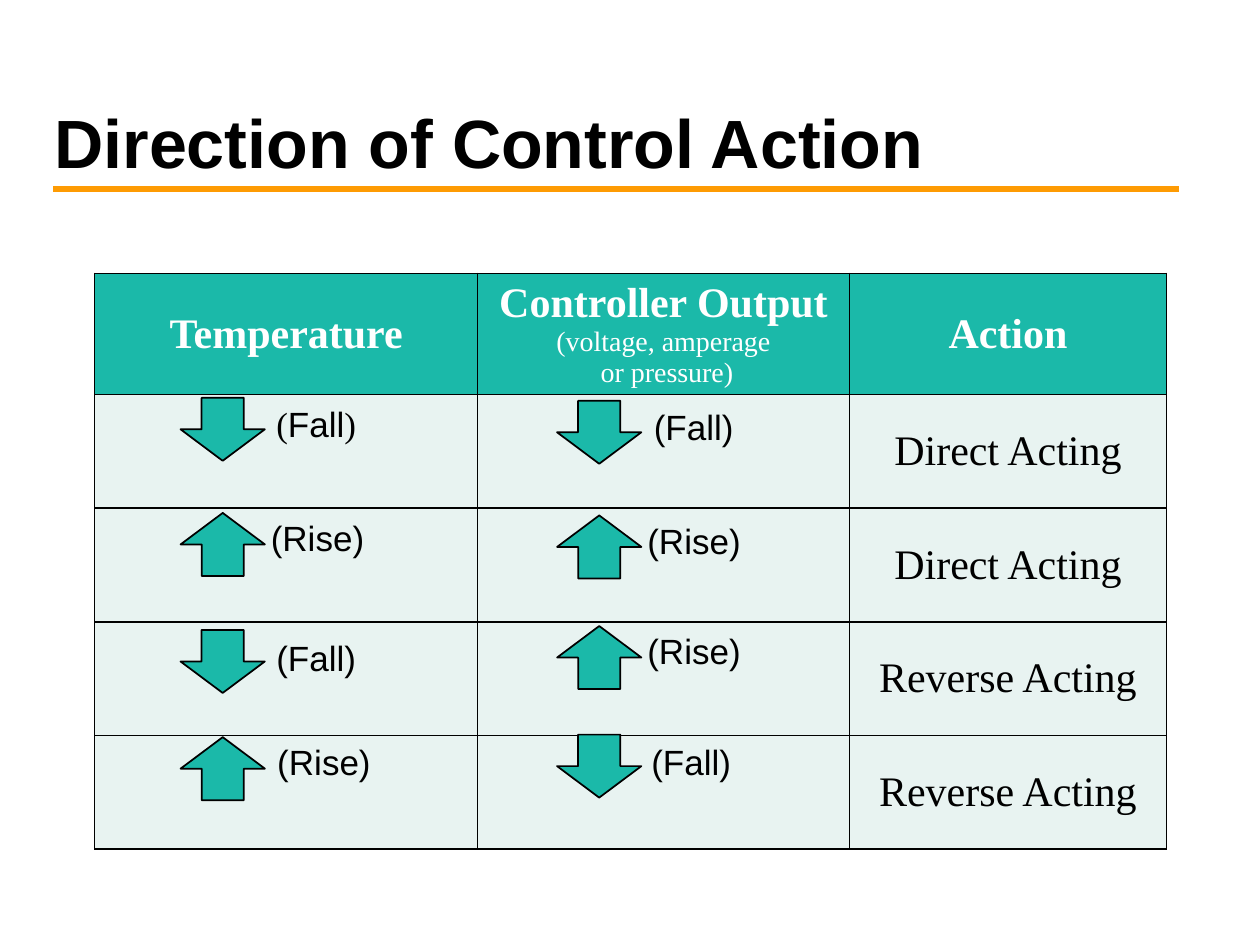
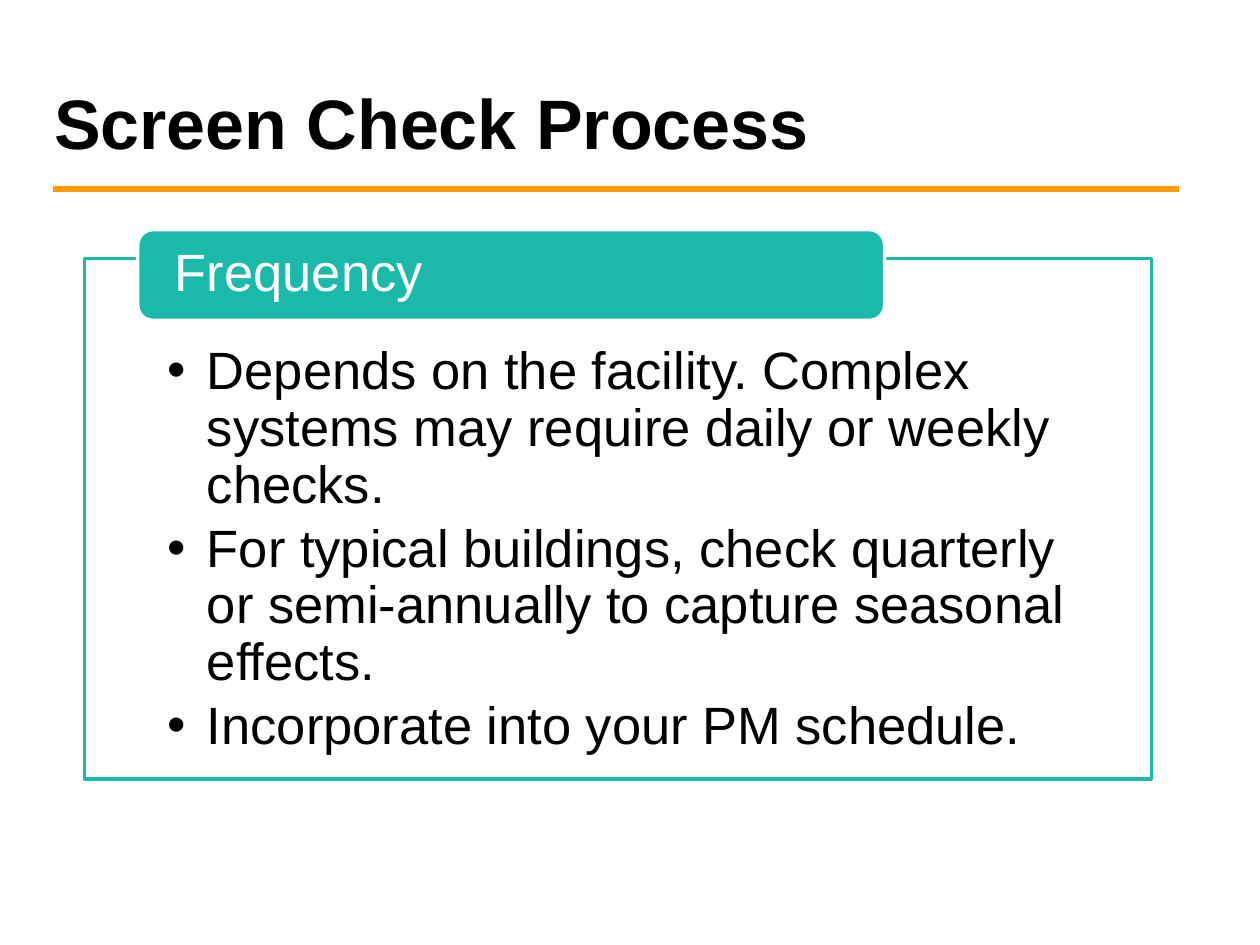
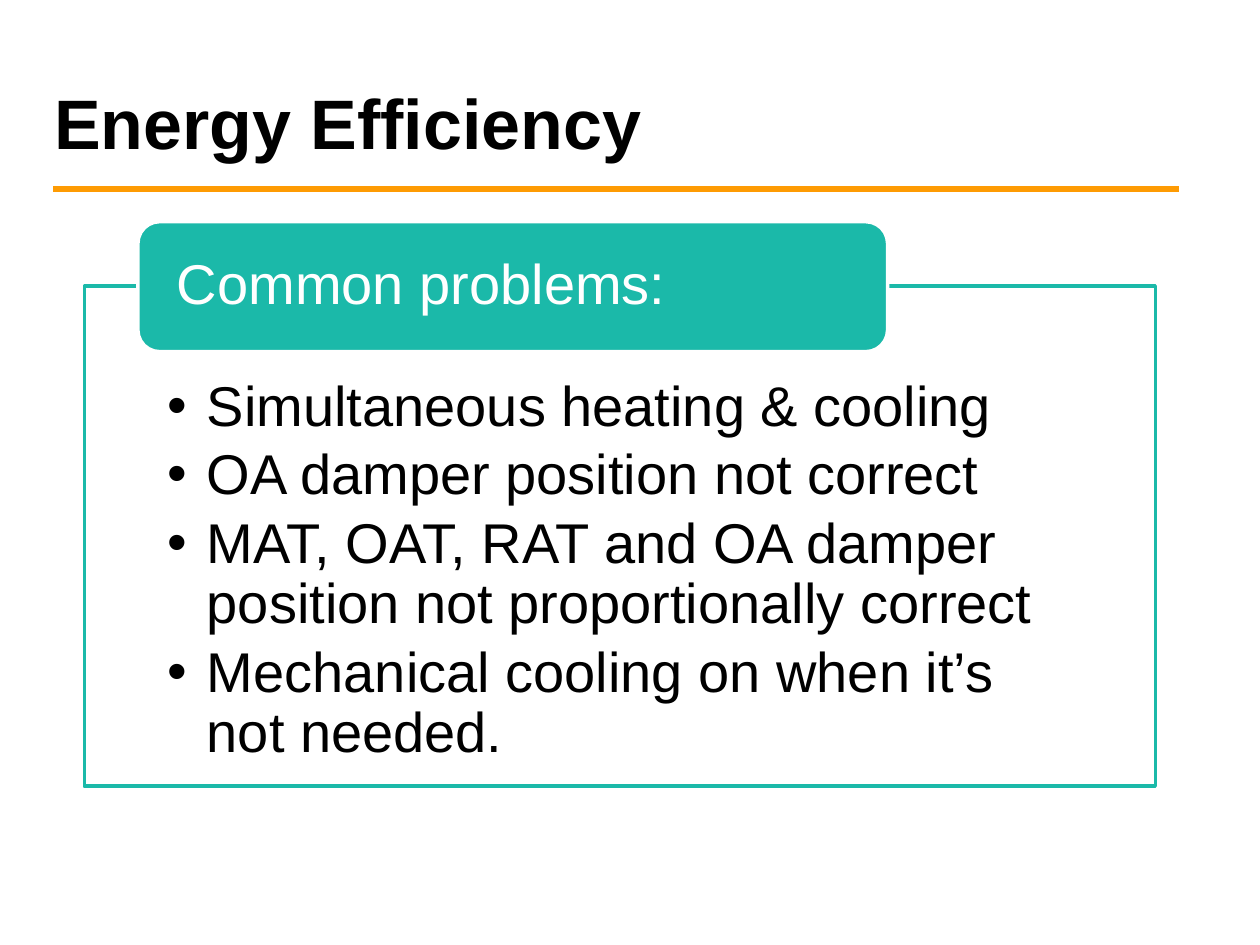
from dataclasses import dataclass

from lxml.etree import SubElement
from pptx import Presentation
from pptx.dml.color import RGBColor
from pptx.enum.shapes import MSO_CONNECTOR, MSO_SHAPE
from pptx.enum.text import MSO_ANCHOR, MSO_AUTO_SIZE, PP_ALIGN
from pptx.oxml.ns import qn
from pptx.util import Cm, Pt

COLORS = {
    "teal": "1BB9A9",
    "mint": "E8F3F1",
    "orange": "FE9B03",
    "black": "000000",
    "white": "FFFFFF",
}
SANS = "Arial"
SERIF = "Times New Roman"
TITLE_ONLY, TITLE_AND_BODY = 5, 1


@dataclass
class Box:
    left: float
    top: float
    width: float
    height: float

    def inside(self, dx, dy, width, height):
        return Box(self.left + dx, self.top + dy, width, height)

    def lengths(self):
        return [Cm(side) for side in (self.left, self.top, self.width, self.height)]


def rgb(name):
    return RGBColor.from_string(COLORS[name])


def paint(shape, fill, line, width):
    shape.fill.solid()
    shape.fill.fore_color.rgb = rgb(fill)
    shape.line.color.rgb = rgb(line)
    shape.line.width = Pt(width)


def style(paragraph, size, color, face=SANS, bold=False):
    for run in paragraph.runs:
        run.font.size = Pt(size)
        run.font.name = face
        run.font.bold = bold
        run.font.color.rgb = rgb(color)


def set_insets(frame, left, top, right, bottom):
    frame.margin_left, frame.margin_top = Cm(left), Cm(top)
    frame.margin_right, frame.margin_bottom = Cm(right), Cm(bottom)


def add_master_rule(prs, slide):
    rule = slide.shapes.add_connector(
        MSO_CONNECTOR.STRAIGHT, Cm(1.07), Cm(3.81), Cm(23.77), Cm(3.81))
    rule.line.color.rgb = rgb("orange")
    rule.line.width = Pt(4)
    SubElement(rule.element.spPr, qn("a:effectLst"))
    prs.slide_master.shapes.element.append(rule.element)


def place(shape, box):
    shape.left, shape.top, shape.width, shape.height = box.lengths()


def add_titled_slide(prs, layout, heading, box, size):
    slide = prs.slides.add_slide(prs.slide_layouts[layout])
    title = slide.shapes.title
    place(title, box)
    frame = title.text_frame
    frame.text = heading
    frame.auto_size = MSO_AUTO_SIZE.NONE
    frame.vertical_anchor = MSO_ANCHOR.MIDDLE
    frame.paragraphs[0].alignment = PP_ALIGN.LEFT
    style(frame.paragraphs[0], size, "black", bold=True)
    return slide


def set_borders(cell):
    properties = cell._tc.get_or_add_tcPr()
    for position, side in enumerate(("lnL", "lnR", "lnT", "lnB")):
        border = properties.makeelement(qn(f"a:{side}"), {"w": str(Pt(1))})
        fill = SubElement(border, qn("a:solidFill"))
        SubElement(fill, qn("a:srgbClr"), val=COLORS["black"])
        properties.insert(position, border)


def fill_cell(cell, text, header):
    cell.fill.solid()
    cell.fill.fore_color.rgb = rgb("teal" if header else "mint")
    set_borders(cell)
    cell.vertical_anchor = MSO_ANCHOR.MIDDLE
    cell.text = text
    for paragraph in cell.text_frame.paragraphs:
        paragraph.alignment = PP_ALIGN.CENTER
        style(paragraph, 24, "white" if header else "black", SERIF, header)


def add_output_note(cell):
    first = cell.text_frame.paragraphs[0]
    second = cell.text_frame.add_paragraph()
    second.alignment = PP_ALIGN.CENTER
    for paragraph, words in ((first, "(voltage, amperage"), (second, " or pressure)")):
        note = paragraph.add_run()
        note.text = words
        note.font.size = Pt(16)
        note.font.name = SERIF
        note.font.bold = False
        note.font.color.rgb = rgb("white")


def add_action_table(slide, box):
    headers = ["Temperature", "Controller Output ", "Action"]
    actions = ["Direct Acting"] * 2 + ["Reverse Acting"] * 2
    rows = [headers] + [["", "", action] for action in actions]
    table = slide.shapes.add_table(len(rows), len(headers), *box.lengths()).table
    table.horz_banding = False
    for column, width in zip(table.columns, (7.72, 7.49, 6.4)):
        column.width = Cm(width)
    for index, texts in enumerate(rows):
        table.rows[index].height = Cm(2.29 if index else 2.44)
        for cell, text in zip(table.rows[index].cells, texts):
            fill_cell(cell, text, header=index == 0)
    add_output_note(table.cell(0, 1))


def add_signal(slide, box, word, label_dx, label_dy, bracket_face):
    group = slide.shapes.add_group_shape()
    arrow = group.shapes.add_shape(MSO_SHAPE.DOWN_ARROW, *box.lengths())
    arrow.shadow.inherit = False
    paint(arrow, "teal", "black", 1)
    arrow.rotation = 180 if word == "Rise" else 0
    label_box = box.inside(label_dx, label_dy, 3.6 if word == "Rise" else 2.67, 1.12)
    label = group.shapes.add_textbox(*label_box.lengths())
    label.text_frame.word_wrap = True
    paragraph = label.text_frame.paragraphs[0]
    for piece in ("(", word, ")"):
        paragraph.add_run().text = piece
    style(paragraph, 20, "black")
    for bracket in paragraph.runs[::2]:
        bracket.font.name = bracket_face


def add_signals(slide, box):
    temperature = [
        (2.51, "Fall", 1.68, -0.03, SERIF),
        (4.83, "Rise", 1.57, -0.05, SANS),
        (7.19, "Fall", 1.68, 0, SANS),
        (9.35, "Rise", 1.7, -0.05, SANS),
    ]
    output = [
        (2.57, "Fall", 1.7, -0.03, SANS),
        (4.88, "Rise", 1.57, -0.05, SANS),
        (7.11, "Rise", 1.57, -0.05, SANS),
        (9.3, "Fall", 1.65, 0, SANS),
    ]
    for left, signals in ((1.73, temperature), (9.32, output)):
        for top, *label in signals:
            add_signal(slide, box.inside(left, top, 1.7, 1.27), *label)


def add_bullet(paragraph):
    properties = paragraph._p.get_or_add_pPr()
    properties.set("marL", str(Cm(0.79)))
    properties.set("indent", str(-Cm(0.79)))
    SubElement(properties, qn("a:buChar"), char="•")


def add_list_panel(slide, box, points, size, top_inset, bottom_inset):
    panel = slide.placeholders[1]
    place(panel, box)
    paint(panel, "white", "teal", 2)
    color = panel.fill._xPr.find(qn("a:solidFill")).find(qn("a:srgbClr"))
    SubElement(color, qn("a:alpha"), val="90000")
    frame = panel.text_frame
    frame.text = "\n".join(points)
    frame.auto_size = MSO_AUTO_SIZE.NONE
    frame.vertical_anchor = MSO_ANCHOR.TOP
    set_insets(frame, 1.68, top_inset, 1.68, bottom_inset)
    for paragraph in frame.paragraphs:
        paragraph.line_spacing = 0.9
        paragraph.space_before = Pt(0)
        paragraph.space_after = Pt(round(size * 0.14, 1))
        add_bullet(paragraph)
        style(paragraph, size, "black")


def add_panel_tab(slide, box, caption, size, rise, height):
    tab_box = box.inside(box.width * 0.05, -rise, box.width * 0.7, height)
    tab = slide.shapes.add_shape(MSO_SHAPE.ROUNDED_RECTANGLE, *tab_box.lengths())
    tab.shadow.inherit = False
    paint(tab, "teal", "white", 2)
    frame = tab.text_frame
    frame.text = caption
    frame.word_wrap = True
    frame.vertical_anchor = MSO_ANCHOR.MIDDLE
    set_insets(frame, 0.66, 0, 0.66, 0)
    frame.paragraphs[0].alignment = PP_ALIGN.LEFT
    frame.paragraphs[0].line_spacing = 0.9
    style(frame.paragraphs[0], size, "white")


def build_action_slide(prs):
    slide = add_titled_slide(prs, TITLE_ONLY, "Direction of Control Action",
                             Box(0.84, 1.47, 22.66, 2.74), 39)
    add_master_rule(prs, slide)
    table_box = Box(1.91, 5.51, 21.61, 11.6)
    add_action_table(slide, table_box)
    add_signals(slide, table_box)


def build_list_slide(prs, heading, box, caption, points, size, insets, rise, tab_height):
    slide = add_titled_slide(prs, TITLE_AND_BODY, heading,
                             Box(0.84, 1.07, 18.42, 2.74), 40)
    add_list_panel(slide, box, points, size, *insets)
    add_panel_tab(slide, box, caption, size, rise, tab_height)


def main():
    prs = Presentation()
    prs.slide_width, prs.slide_height = Cm(25.4), Cm(19.05)
    build_action_slide(prs)
    build_list_slide(
        prs, "Screen Check Process", Box(1.7, 5.21, 21.51, 10.49), "Frequency",
        ["Depends on the facility. Complex systems may require daily or weekly checks.",
         "For typical buildings, check quarterly or semi-annually to capture seasonal effects.",
         "Incorporate into your PM schedule."],
        30, (1.73, 0.58), 0.58, 1.83)
    build_list_slide(
        prs, "Energy Efficiency", Box(1.7, 5.77, 21.59, 10.08), "Common problems:",
        ["Simultaneous heating & cooling",
         "OA damper position not correct",
         "MAT, OAT, RAT and OA damper position not proportionally correct",
         "Mechanical cooling on when it’s not needed."],
        32, (1.85, 0.64), 1.3, 2.62)
    prs.save("out.pptx")


if __name__ == "__main__":
    main()
